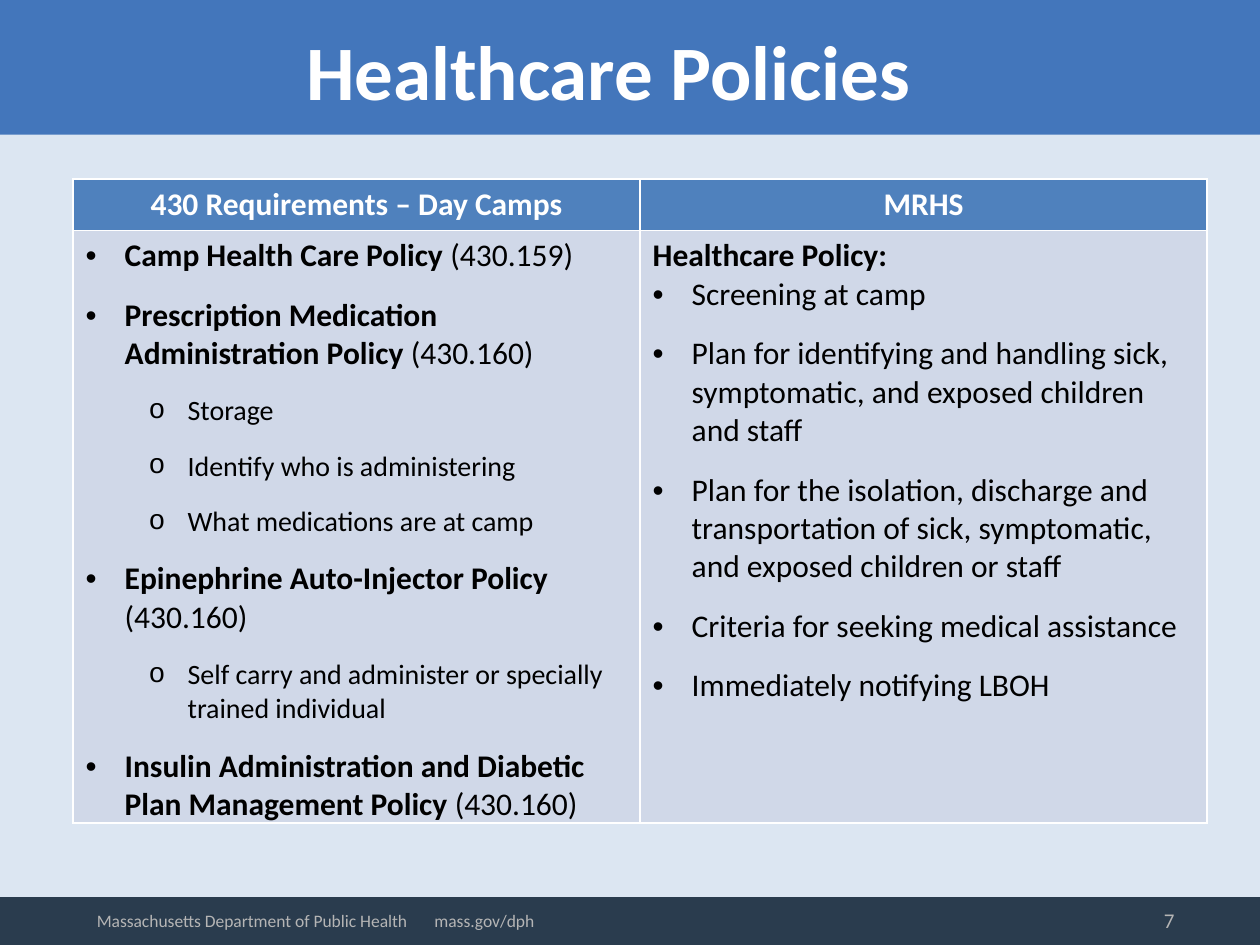
from dataclasses import dataclass

from lxml.etree import SubElement
from pptx import Presentation
from pptx.dml.color import RGBColor
from pptx.enum.shapes import MSO_SHAPE
from pptx.enum.text import MSO_ANCHOR, PP_ALIGN
from pptx.oxml.ns import qn
from pptx.util import Inches, Pt


@dataclass(frozen=True)
class Theme:
    font: str = "Calibri"
    background: str = "DCE6F2"
    banner: str = "4376BB"
    footer: str = "2A3C4E"
    header_cell: str = "4F81BD"
    body_cell: str = "D0D8E8"
    light: str = "FFFFFF"
    dark: str = "000000"
    muted: str = "B5B5B5"
    title_size: int = 44
    text_size: int = 18
    detail_size: int = 16
    number_size: int = 12
    footer_size: int = 10


THEME = Theme()

# Each entry: bullet level (None for no bullet), bold part, regular part
HEADERS = ["430 Requirements – Day Camps", "MRHS"]
DAY_CAMPS = [
    (0, "Camp Health Care Policy ", "(430.159)"),
    (0, "Prescription Medication Administration Policy ", "(430.160)"),
    (1, "", "Storage"),
    (1, "", "Identify who is administering"),
    (1, "", "What medications are at camp"),
    (0, "Epinephrine Auto-Injector Policy ", "(430.160)"),
    (1, "", "Self carry and administer or specially trained individual"),
    (0, "Insulin Administration and Diabetic Plan Management Policy ", "(430.160)"),
]
MRHS = [
    (None, "Healthcare Policy:", ""),
    (0, "", "Screening at camp"),
    (0, "", "Plan for identifying and handling sick, symptomatic, "
            "and exposed children and staff"),
    (0, "", "Plan for the isolation, discharge and transportation of sick, "
            "symptomatic, and exposed children or staff"),
    (0, "", "Criteria for seeking medical assistance"),
    (0, "", "Immediately notifying LBOH"),
]
BULLETS = [("•", "Arial"), ("o", "Courier New")]


def paint(fill, color):
    fill.solid()
    fill.fore_color.rgb = RGBColor.from_string(color)


def set_font(para, size, color, bold=None):
    font = para.font
    font.name, font.size, font.bold = THEME.font, Pt(size), bold
    font.color.rgb = RGBColor.from_string(color)


def add_band(page, top, height, color):
    band = page.shapes.add_shape(
        MSO_SHAPE.RECTANGLE, 0, Inches(top), Inches(10), Inches(height))
    band.shadow.inherit = False
    paint(band.fill, color)
    band.line.fill.background()


def add_text(page, place, text, size, color, align, bold=None):
    box = page.shapes.add_textbox(*(Inches(length) for length in place))
    frame = box.text_frame
    frame.word_wrap = True
    frame.vertical_anchor = MSO_ANCHOR.MIDDLE
    para = frame.paragraphs[0]
    para.text = text
    para.alignment = align
    set_font(para, size, color, bold)
    return para


def add_tab_stop(para, position):
    properties = para._p.get_or_add_pPr()
    stops = SubElement(properties, qn("a:tabLst"))
    SubElement(stops, qn("a:tab"), pos=str(Inches(position)), algn="l")
    # The schema wants tab stops ahead of the default font
    properties.insert(0, stops)


def set_bullet(para, level):
    para.level = level
    para.space_after = Pt(12)
    properties = para._p.get_or_add_pPr()
    properties.set("marL", str(Inches(0.31 + 0.5 * level)))
    properties.set("indent", str(Inches(-0.31)))
    symbol, typeface = BULLETS[level]
    SubElement(properties, qn("a:buFont"), typeface=typeface)
    SubElement(properties, qn("a:buChar"), char=symbol)


def fill_header(cell, text):
    paint(cell.fill, THEME.header_cell)
    para = cell.text_frame.paragraphs[0]
    para.text = text
    para.alignment = PP_ALIGN.CENTER
    set_font(para, THEME.text_size, THEME.light, True)


def fill_body(cell, entries):
    paint(cell.fill, THEME.body_cell)
    frame = cell.text_frame
    for index, (level, strong, plain) in enumerate(entries):
        para = frame.add_paragraph() if index else frame.paragraphs[0]
        if level is not None:
            set_bullet(para, level)
        size = THEME.detail_size if level == 1 else THEME.text_size
        set_font(para, size, THEME.dark)
        for text, bold in ((strong, True), (plain, False)):
            if text:
                span = para.add_run()
                span.text = text
                span.font.bold = bold


def add_policy_table(page):
    # The default table style supplies the white cell borders
    table = page.shapes.add_table(
        2, 2, Inches(0.58), Inches(1.42), Inches(9), Inches(5.11)).table
    for row, height in zip(table.rows, (0.41, 4.7)):
        row.height = Inches(height)
    for column, (header, entries) in enumerate(zip(HEADERS, (DAY_CAMPS, MRHS))):
        fill_header(table.cell(0, column), header)
        fill_body(table.cell(1, column), entries)


def main():
    deck = Presentation()
    deck.slide_width, deck.slide_height = Inches(10), Inches(7.5)
    page = deck.slides.add_slide(deck.slide_layouts[6])
    paint(page.background.fill, THEME.background)

    # Banner and title
    add_band(page, 0, 1.07, THEME.banner)
    add_band(page, 7.12, 0.38, THEME.footer)
    add_text(page, (0.33, 0.08, 9, 0.95), "Healthcare Policies",
             THEME.title_size, THEME.light, PP_ALIGN.CENTER, True)

    # Policy comparison
    add_policy_table(page)

    # Footer
    add_text(page, (7.18, 7.1, 2.24, 0.4), "7",
             THEME.number_size, THEME.muted, PP_ALIGN.RIGHT)
    credit = add_text(page, (0.67, 7.12, 4.17, 0.37),
                      "Massachusetts Department of Public Health\tmass.gov/dph",
                      THEME.footer_size, THEME.muted, PP_ALIGN.LEFT)
    add_tab_stop(credit, 2.68)

    deck.save("out.pptx")


if __name__ == "__main__":
    main()
